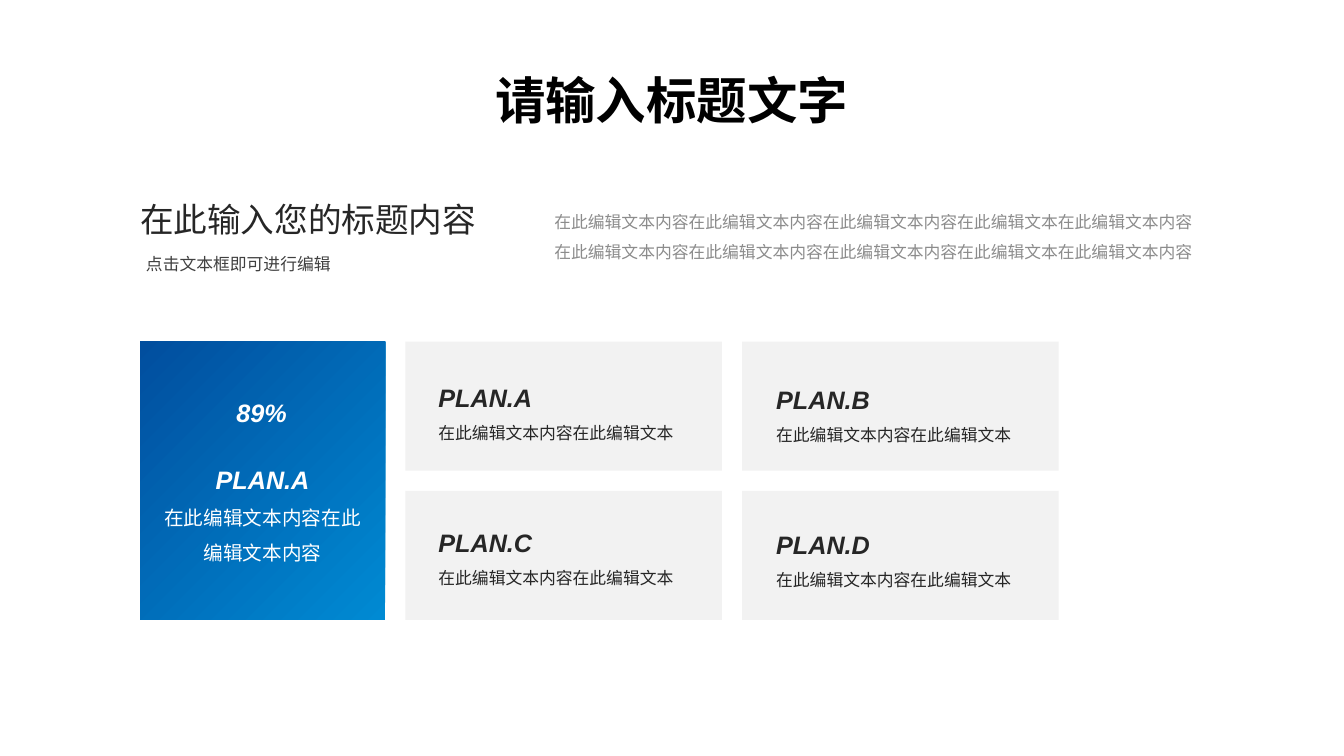
from pptx import Presentation
from pptx.dml.color import RGBColor
from pptx.enum.shapes import MSO_SHAPE as Shape
from pptx.enum.text import MSO_ANCHOR as Anchor, PP_ALIGN as Align
from pptx.oxml.ns import qn
from pptx.util import Pt
from lxml.etree import SubElement

PX = 9144  # EMU per px, at 100 px to the inch
BLACK = RGBColor(0x00, 0x00, 0x00)
INK = RGBColor(0x26, 0x26, 0x26)
SOFT_INK = RGBColor(0x40, 0x40, 0x40)
WHITE = RGBColor(0xFF, 0xFF, 0xFF)
CARD_GREY = RGBColor(0xF2, 0xF2, 0xF2)
BRIGHT_BLUE = RGBColor(0x00, 0x8A, 0xD3)
DEEP_BLUE = RGBColor(0x01, 0x4E, 0x9E)

deck = Presentation()
deck.slide_width, deck.slide_height = 1333 * PX, 750 * PX
page = deck.slides.add_slide(deck.slide_layouts[5])


def write(box, text, size, color, align=Align.LEFT, spacing=1.0,
          strong=False, italic=False, font="Arial"):
    para = box.text_frame.paragraphs[0]
    para.alignment = align
    para.line_spacing = spacing
    span = para.add_run()
    span.text = text
    span.font.size = Pt(size)
    span.font.bold, span.font.italic = strong, italic
    span.font.color.rgb = color
    span.font.name = font
    SubElement(span.font._element, qn("a:ea"), typeface=font)
    return span


def add_text(left, top, width, height, *content, **style):
    box = page.shapes.add_textbox(left * PX, top * PX, width * PX, height * PX)
    box.text_frame.word_wrap = True
    return write(box, *content, **style)


# Title, with no side margins so that it stays on one line
title = page.shapes.title
title.left, title.top, title.width, title.height = 481 * PX, 63 * PX, 370 * PX, 71 * PX
title.text_frame.word_wrap = False
title.text_frame.margin_left = title.text_frame.margin_right = 0
title.text_frame.vertical_anchor = Anchor.MIDDLE
write(title, "请输入标题文字", 36, BLACK, align=Align.CENTER,
      strong=True, font="Noto Sans CJK SC")

# Introduction
add_text(135, 247, 304, 30, "点击文本框即可进行编辑", 12, SOFT_INK)
add_text(129, 192, 369, 50, "在此输入您的标题内容", 24, INK)
sentence = "在此编辑文本内容" * 3 + "在此编辑文本在此编辑文本内容"
summary = add_text(540, 195, 664, 71, sentence * 2, 12, INK, spacing=1.5)
summary_color = summary.font._element.find(".//" + qn("a:srgbClr"))
SubElement(summary_color, qn("a:alpha"), val="52000")

# Grey plan cards, two by two
for index, letter in enumerate("ABCD"):
    row, column = divmod(index, 2)
    card = page.shapes.add_shape(Shape.RECTANGLE, (402 + 334 * column) * PX,
                                 (339 + 148 * row) * PX, 314 * PX, 128 * PX)
    card.shadow.inherit = False
    card.fill.solid()
    card.fill.fore_color.rgb = CARD_GREY
    card.line.fill.background()
    left, top = 425 + 335 * column, 359 + 144 * row + 2 * column
    add_text(left, top, 291, 50, "PLAN." + letter, 18, INK,
             spacing=1.5, strong=True, italic=True)
    add_text(left, top + 45, 267, 40, "在此编辑文本内容在此编辑文本", 12, INK, spacing=1.5)

# Blue highlight panel
panel = page.shapes.add_shape(Shape.RECTANGLE, 139 * PX, 339 * PX, 243 * PX, 276 * PX)
panel.shadow.inherit = False
panel.line.fill.background()
panel.fill.gradient()
panel.fill.gradient_angle = 135
for stop, color in zip(panel.fill.gradient_stops, (BRIGHT_BLUE, DEEP_BLUE)):
    stop.color.rgb = color
for left, top, label in ((138, 374, "89%"), (139, 441, "PLAN.A")):
    add_text(left, top, 243, 50, label, 18, WHITE, align=Align.CENTER,
             spacing=1.5, strong=True, italic=True)
add_text(148, 485, 225, 81, "在此编辑文本内容在此编辑文本内容", 14, WHITE,
         align=Align.CENTER, spacing=1.5)

deck.save("out.pptx")
